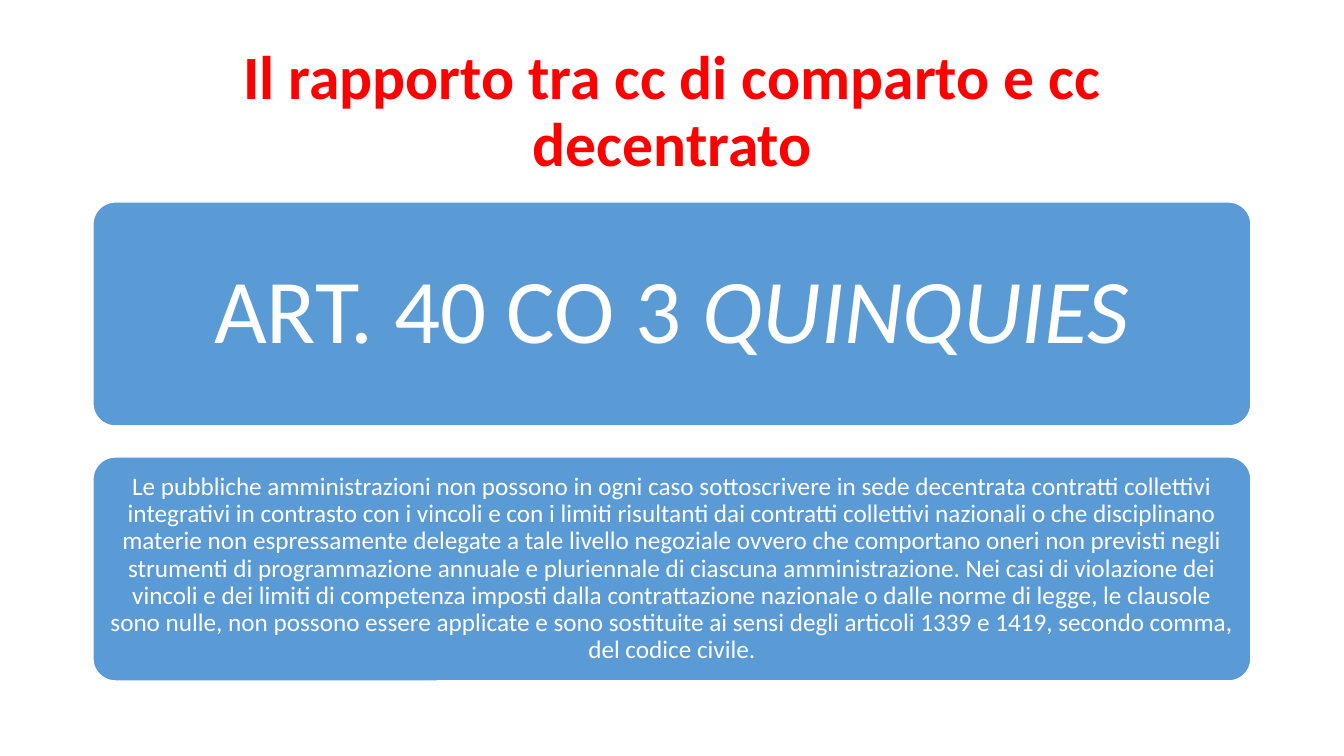
from pptx import Presentation
from pptx.dml.color import RGBColor
from pptx.enum.shapes import MSO_SHAPE
from pptx.enum.text import MSO_ANCHOR, MSO_AUTO_SIZE, PP_ALIGN
from pptx.util import Pt

# Content: each card has its runs (text, italic), size in pt, inset in px
TITLE = "Il rapporto tra cc di comparto e cc decentrato"
CARDS = [
    ([("ART. 40 CO 3 ", False), ("QUINQUIES", True)], 65, 27),
    ([("Le pubbliche amministrazioni non possono in ogni caso sottoscrivere "
       "in sede decentrata contratti collettivi integrativi in contrasto con "
       "i vincoli e con i limiti risultanti dai contratti collettivi nazionali "
       "o che disciplinano materie non espressamente delegate a tale livello "
       "negoziale ovvero che comportano oneri non previsti negli strumenti di "
       "programmazione annuale e pluriennale di ciascuna amministrazione. Nei "
       "casi di violazione dei vincoli e dei limiti di competenza imposti dalla "
       "contrattazione nazionale o dalle norme di legge, le clausole sono nulle, "
       "non possono essere applicate e sono sostituite ai sensi degli articoli "
       "1339 e 1419, secondo comma, del codice civile.", False)], 18, 7),
]

RED = RGBColor(0xFF, 0x00, 0x00)
BLUE = RGBColor(0x5B, 0x9B, 0xD5)
WHITE = RGBColor(0xFF, 0xFF, 0xFF)
FONT = "Calibri"

# Layout in px
WIDE, HIGH = 1344, 756
LEFT, TOP, CARD_W, CARD_H, GAP = 93, 202, 1158, 224, 31


def px(n):
    return round(n * 914400 / 100.8)


def style(run, size, color, bold=False, italic=False):
    font = run.font
    font.name, font.size = FONT, Pt(size)
    font.bold, font.italic = bold, italic
    font.color.rgb = color


def center(frame):
    frame.word_wrap = True
    frame.auto_size = MSO_AUTO_SIZE.NONE
    frame.vertical_anchor = MSO_ANCHOR.MIDDLE
    para = frame.paragraphs[0]
    para.alignment = PP_ALIGN.CENTER
    para.line_spacing = 0.9
    return para


prs = Presentation()
prs.slide_width, prs.slide_height = px(WIDE), px(HIGH)
slide = prs.slides.add_slide(prs.slide_layouts[5])

# Title
title = slide.shapes.title
title.left, title.top, title.width, title.height = map(px, (93, 40, 1159, 146))
title.text_frame.text = TITLE
style(center(title.text_frame).runs[0], 44, RED, bold=True)

# Stacked cards
for row, (runs, size, inset) in enumerate(CARDS):
    top = TOP + row * (CARD_H + GAP)
    card = slide.shapes.add_shape(MSO_SHAPE.ROUNDED_RECTANGLE,
                                  *map(px, (LEFT, top, CARD_W, CARD_H)))
    card.adjustments[0] = 0.1
    card.shadow.inherit = False
    card.fill.solid()
    card.fill.fore_color.rgb = BLUE
    card.line.color.rgb = WHITE
    card.line.width = Pt(1)
    frame = card.text_frame
    frame.margin_left = frame.margin_right = px(inset)
    frame.margin_top = frame.margin_bottom = px(inset)
    para = center(frame)
    for text, italic in runs:
        run = para.add_run()
        run.text = text
        style(run, size, WHITE, italic=italic)

prs.save("out.pptx")
